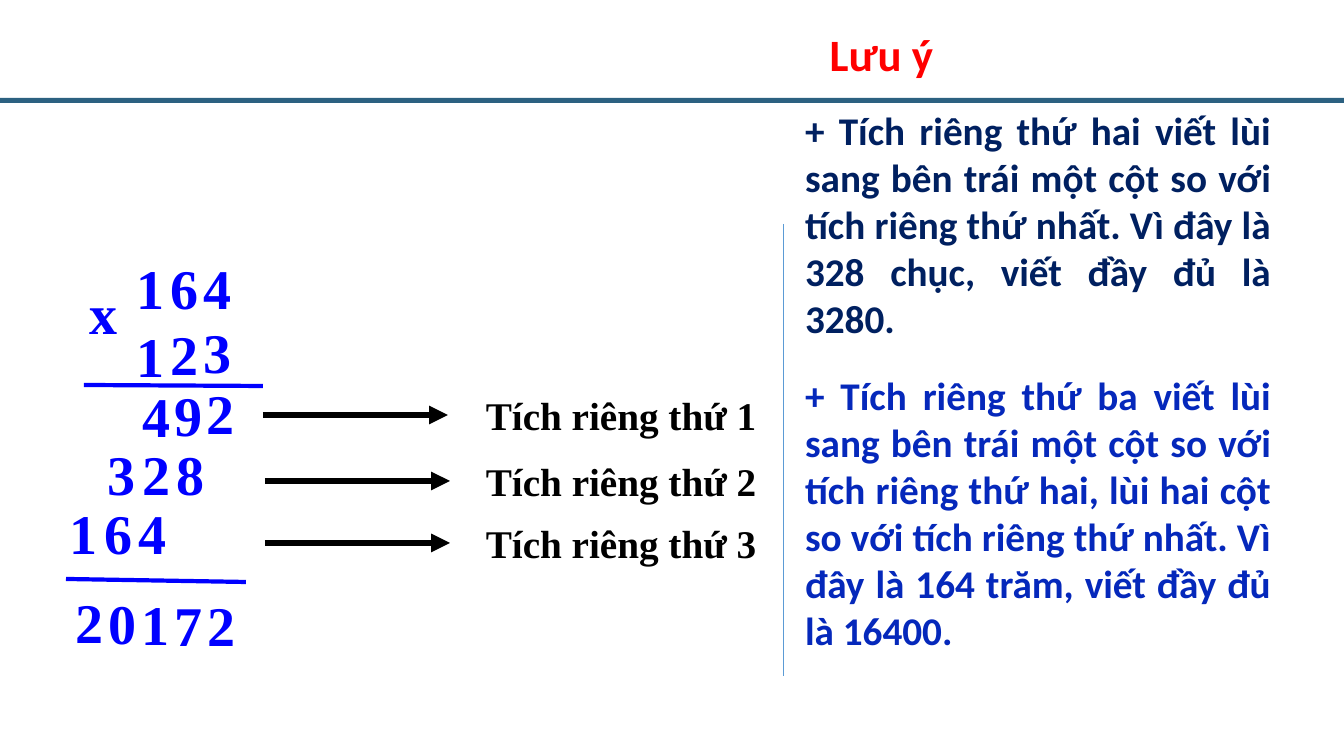
import pptx
import pptx.dml.color
import pptx.enum.shapes
import pptx.enum.text
import pptx.oxml
import pptx.oxml.ns
import pptx.util

RGB = pptx.dml.color.RGBColor
ALIGN = pptx.enum.text.PP_ALIGN
ANCHOR = pptx.enum.text.MSO_ANCHOR
FIT = pptx.enum.text.MSO_AUTO_SIZE
SHAPE = pptx.enum.shapes.MSO_SHAPE
LINE = pptx.enum.shapes.MSO_CONNECTOR

SCALE = 914400 / 100.8
WIDE, HIGH = 1344, 756

RED = RGB(0xFF, 0x00, 0x00)
BLUE = RGB(0x00, 0x00, 0xFF)
BLACK = RGB(0x00, 0x00, 0x00)
TEAL = RGB(0x2C, 0x61, 0x81)
SKY = RGB(0x5B, 0x9B, 0xD5)
NAVY = RGB(0x00, 0x20, 0x60)
ROYAL = RGB(0x05, 0x28, 0xBB)

HEAD = {"name": "Calibri", "size": pptx.util.Pt(32), "bold": True}
NOTE = {"name": "Calibri", "size": pptx.util.Pt(28), "bold": True}
DIGIT = {"name": "Times New Roman", "size": pptx.util.Pt(40), "bold": True}
LABEL = {"name": "Times New Roman", "size": pptx.util.Pt(28), "bold": True}

ROWS = [
    ("164", (68, 0), (135, 0)),
    ("123", (68, 68), (135, 64)),
    ("492", (74, 128), (138, 125)),
    ("328", (39, 186), (108, 186)),
    ("164", (1, 245), (70, 245)),
    ("20172", (7, 334), (139, 337)),
]
STEPS = [(0, 0, 417), (2, 66, 326), (2, 128, 294)]
NOTES = [
    (1, 0, 248, NAVY, "+ Tích riêng thứ hai viết lùi sang bên trái một cột so với "
     "tích riêng thứ nhất. Vì đây là 328 chục, viết đầy đủ là 3280."),
    (2, 265, 343, ROYAL, "+ Tích riêng thứ ba viết lùi sang bên trái một cột so với "
     "tích riêng thứ hai, lùi hai cột so với tích riêng thứ nhất. "
     "Vì đây là 164 trăm, viết đầy đủ là 16400."),
]


def px(num):
    """Turn pixels into EMU."""
    return pptx.util.Emu(round(num * SCALE))


def place(shape, left, top, width, height):
    """Move and size a shape in pixels."""
    box = {"left": left, "top": top, "width": width, "height": height}
    for name, num in box.items():
        setattr(shape, name, px(num))


def write(shape, text, style, color, **frame):
    """Fill a shape with one styled paragraph and return it."""
    for name, value in {"word_wrap": True, "auto_size": FIT.SHAPE_TO_FIT_TEXT, **frame}.items():
        setattr(shape.text_frame, name, value)
    para = shape.text_frame.paragraphs[0]
    run = para.add_run()
    run.text = text
    for name, value in style.items():
        setattr(run.font, name, value)
    run.font.color.rgb = color
    return para


def label(slide, box, text, style, color):
    """Add a text box."""
    write(slide.shapes.add_textbox(*map(px, box)), text, style, color)


def rule(slide, start, end, color, weight, arrow=False):
    """Draw a straight line, with an arrowhead on request."""
    line = slide.shapes.add_connector(LINE.STRAIGHT, *map(px, start + end))
    line.line.color.rgb = color
    line.line.width = pptx.util.Pt(weight)
    props = line.element.spPr
    if arrow:
        tail = pptx.oxml.parse_xml(f'<a:tailEnd {pptx.oxml.ns.nsdecls("a")} type="triangle"/>')
        props.find(pptx.oxml.ns.qn("a:ln")).append(tail)
    props.append(pptx.oxml.parse_xml(f'<a:effectLst {pptx.oxml.ns.nsdecls("a")}/>'))


def header(slide, left, top, width):
    """Draw the heading and the bar below it."""
    bar = slide.shapes.add_shape(SHAPE.RECTANGLE, *map(px, (left, top + 98, width, 5)))
    bar.shadow.inherit = False
    bar.fill.solid()
    bar.fill.fore_color.rgb = TEAL
    bar.line.fill.background()
    title = slide.shapes.title
    place(title, left + 702, top + 27, 359, 54)
    para = write(title, "Lưu ý", HEAD, RED, vertical_anchor=ANCHOR.MIDDLE,
                 margin_left=0, margin_top=0, margin_right=0, margin_bottom=0)
    para.alignment = ALIGN.CENTER


def product(slide, left, top):
    """Set out the long multiplication digit by digit."""
    for text, first, last in ROWS:
        for index, digit in enumerate(text):
            part = index / (len(text) - 1)
            col, row = (a + (b - a) * part for a, b in zip(first, last))
            label(slide, (left + col, top + row, 42, 78), digit, DIGIT, BLUE)
    label(slide, (left + 21, top + 25, 33, 78), "x", DIGIT, BLUE)
    rule(slide, (left + 25, top + 136), (left + 204, top + 137), BLUE, 3)
    rule(slide, (left + 7, top + 330), (left + 187, top + 333), BLUE, 3)


def steps(slide, left, top):
    """Point from each partial product to its name."""
    for count, (shift, drop, width) in enumerate(STEPS, 1):
        row = top + drop
        rule(slide, (left + shift, row + 29), (left + shift + 185, row + 29), BLACK, 4.5, True)
        label(slide, (left + 213, row, width, 57), f"Tích riêng thứ {count}", LABEL, BLACK)


def notes(slide, left, top, width):
    """Place the two remarks beside their divider."""
    rule(slide, (left - 12, top + 123), (left - 12, top + 575), SKY, 0.5)
    for index, drop, height, color, text in NOTES:
        body = slide.placeholders[index]
        place(body, left, top + drop, width, height)
        para = write(body, text, NOTE, color, vertical_anchor=ANCHOR.TOP)
        para.alignment = ALIGN.JUSTIFY
        para.space_before = pptx.util.Pt(0)
        for props in body.element.iter(pptx.oxml.ns.qn("a:pPr")):
            props.set("marL", "0")
            props.set("indent", "0")
            props.append(pptx.oxml.parse_xml(f'<a:buNone {pptx.oxml.ns.nsdecls("a")}/>'))


def main():
    """Build and save the slide."""
    deck = pptx.Presentation()
    deck.slide_width, deck.slide_height = px(WIDE), px(HIGH)
    slide = deck.slides.add_slide(deck.slide_layouts[3])
    header(slide, 0, 0, WIDE)
    product(slide, 59, 249)
    steps(slide, 263, 386)
    notes(slide, 795, 101, 486)
    deck.save("out.pptx")


if __name__ == "__main__":
    main()
